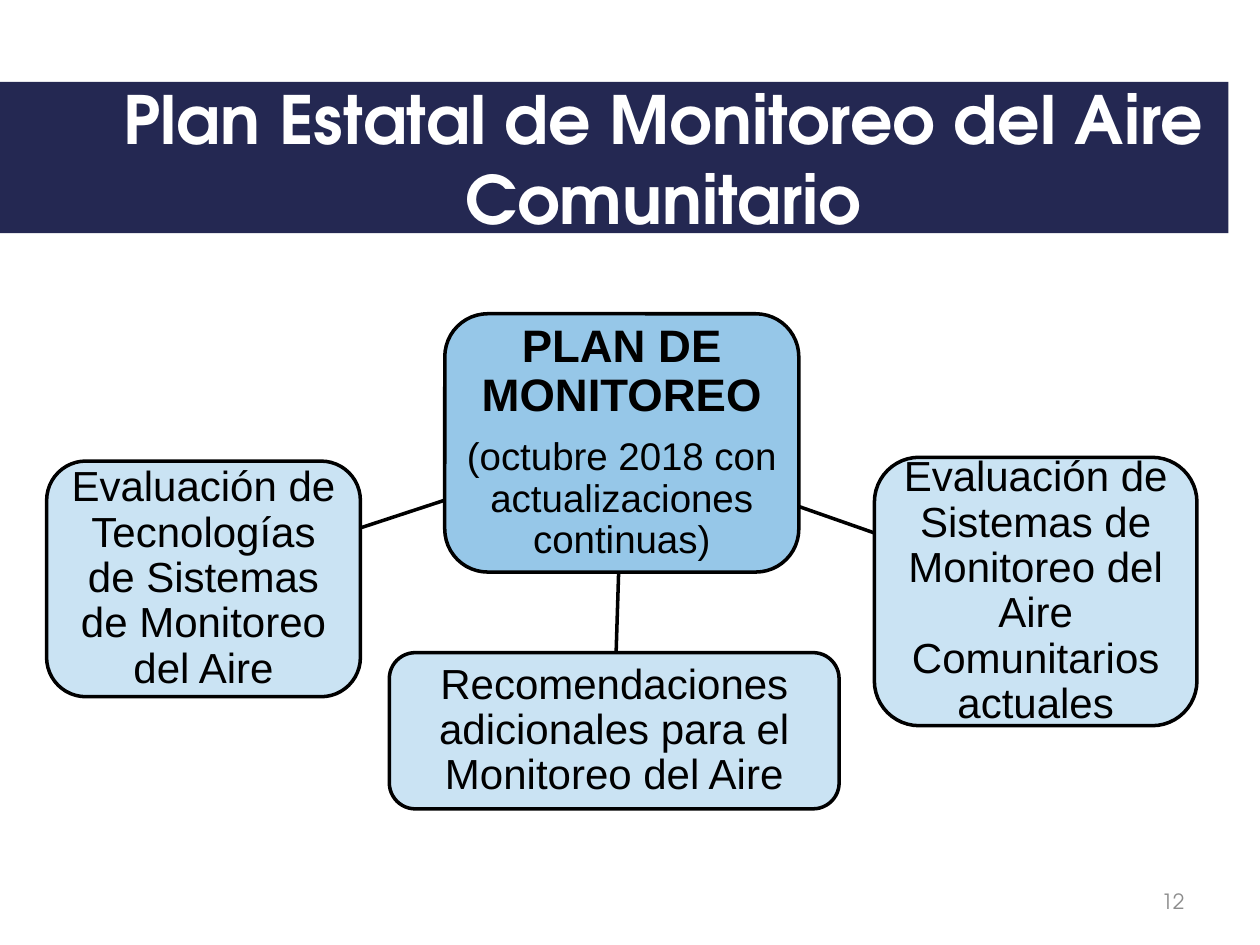
from pptx import Presentation
from pptx.dml.color import RGBColor
from pptx.enum.shapes import MSO_CONNECTOR, MSO_SHAPE
from pptx.enum.text import MSO_ANCHOR, MSO_AUTO_SIZE, PP_ALIGN
from pptx.oxml.ns import qn
from pptx.util import Inches, Pt
from lxml import etree

COLORS = {"navy": "242852", "white": "FFFFFF", "black": "000000",
          "blue": "96C7E8", "pale": "CAE3F3", "gray": "8C8C8C"}
HEADING_FONT, BODY_FONT = "TeX Gyre Adventor", "Arial"

TITLE = "Plan Estatal de Monitoreo del Aire Comunitario"
PAGE_NUMBER = "12"
BOXES = [
    ((3.53, 2.49, 2.81, 2.05), "blue",
     [("PLAN DE MONITOREO", 26, True),
      ("(octubre 2018 con actualizaciones continuas)", 22, False)]),
    ((6.94, 3.63, 2.56, 2.13), "pale",
     [("Evaluación de Sistemas de Monitoreo del Aire Comunitarios actuales", 24, False)]),
    ((0.37, 3.66, 2.49, 1.87), "pale",
     [("Evaluación de Tecnologías de Sistemas de Monitoreo del Aire", 24, False)]),
    ((3.09, 5.18, 3.57, 1.24), "pale",
     [("Recomendaciones adicionales para el Monitoreo del Aire", 24, False)]),
]
LINKS = [(6.34, 4.02, 6.94, 4.23), (3.53, 3.97, 2.86, 4.19), (4.91, 4.54, 4.89, 5.18)]


def rgb(name):
    return RGBColor.from_string(COLORS[name])


def add_run(paragraph, text, size, font, color, bold=False):
    run = paragraph.add_run()
    run.text = text
    run.font.size, run.font.name, run.font.bold = Pt(size), font, bold
    run.font.color.rgb = rgb(color)


def set_frame(frame, left, top, right, bottom):
    frame.word_wrap = True
    frame.auto_size = MSO_AUTO_SIZE.NONE
    frame.vertical_anchor = MSO_ANCHOR.MIDDLE
    frame.margin_left, frame.margin_top = Inches(left), Inches(top)
    frame.margin_right, frame.margin_bottom = Inches(right), Inches(bottom)


def add_box(slide, place, fill, lines):
    shape = slide.shapes.add_shape(MSO_SHAPE.ROUNDED_RECTANGLE, *map(Inches, place))
    shape.shadow.inherit = False
    shape.fill.solid()
    shape.fill.fore_color.rgb = rgb(fill)
    shape.line.color.rgb = rgb("black")
    shape.line.width = Pt(2)
    frame = shape.text_frame
    set_frame(frame, 0.07, 0.07, 0.07, 0.07)
    for index, (text, size, bold) in enumerate(lines):
        paragraph = frame.add_paragraph() if index else frame.paragraphs[0]
        paragraph.alignment = PP_ALIGN.CENTER
        paragraph.line_spacing = 0.9
        paragraph.space_after = Pt(round(0.35 * size))
        add_run(paragraph, text, size, BODY_FONT, "black", bold)


def add_link(slide, points):
    link = slide.shapes.add_connector(MSO_CONNECTOR.STRAIGHT, *map(Inches, points))
    link.line.color.rgb = rgb("black")
    link.line.width = Pt(2)
    etree.SubElement(link._element.spPr, qn("a:effectLst"))


def main():
    presentation = Presentation()
    presentation.slide_width, presentation.slide_height = Inches(10), Inches(7.5)
    slide = presentation.slides.add_slide(presentation.slide_layouts[5])

    title = slide.shapes.title
    title.left, title.top, title.width, title.height = map(Inches, (0, 0.65, 9.75, 1.2))
    title.fill.solid()
    title.fill.fore_color.rgb = rgb("navy")
    set_frame(title.text_frame, 0.88, 0.05, 0.1, 0.05)
    paragraph = title.text_frame.paragraphs[0]
    paragraph.alignment = PP_ALIGN.CENTER
    add_run(paragraph, TITLE, 38, HEADING_FONT, "white", True)

    for place, fill, lines in BOXES:
        add_box(slide, place, fill, lines)
    for points in LINKS:
        add_link(slide, points)

    number = slide.shapes.add_textbox(*map(Inches, (7.17, 6.95, 2.33, 0.4)))
    set_frame(number.text_frame, 0.1, 0.05, 0.1, 0.05)
    paragraph = number.text_frame.paragraphs[0]
    paragraph.alignment = PP_ALIGN.RIGHT
    add_run(paragraph, PAGE_NUMBER, 12, HEADING_FONT, "gray")

    presentation.save("out.pptx")


if __name__ == "__main__":
    main()
